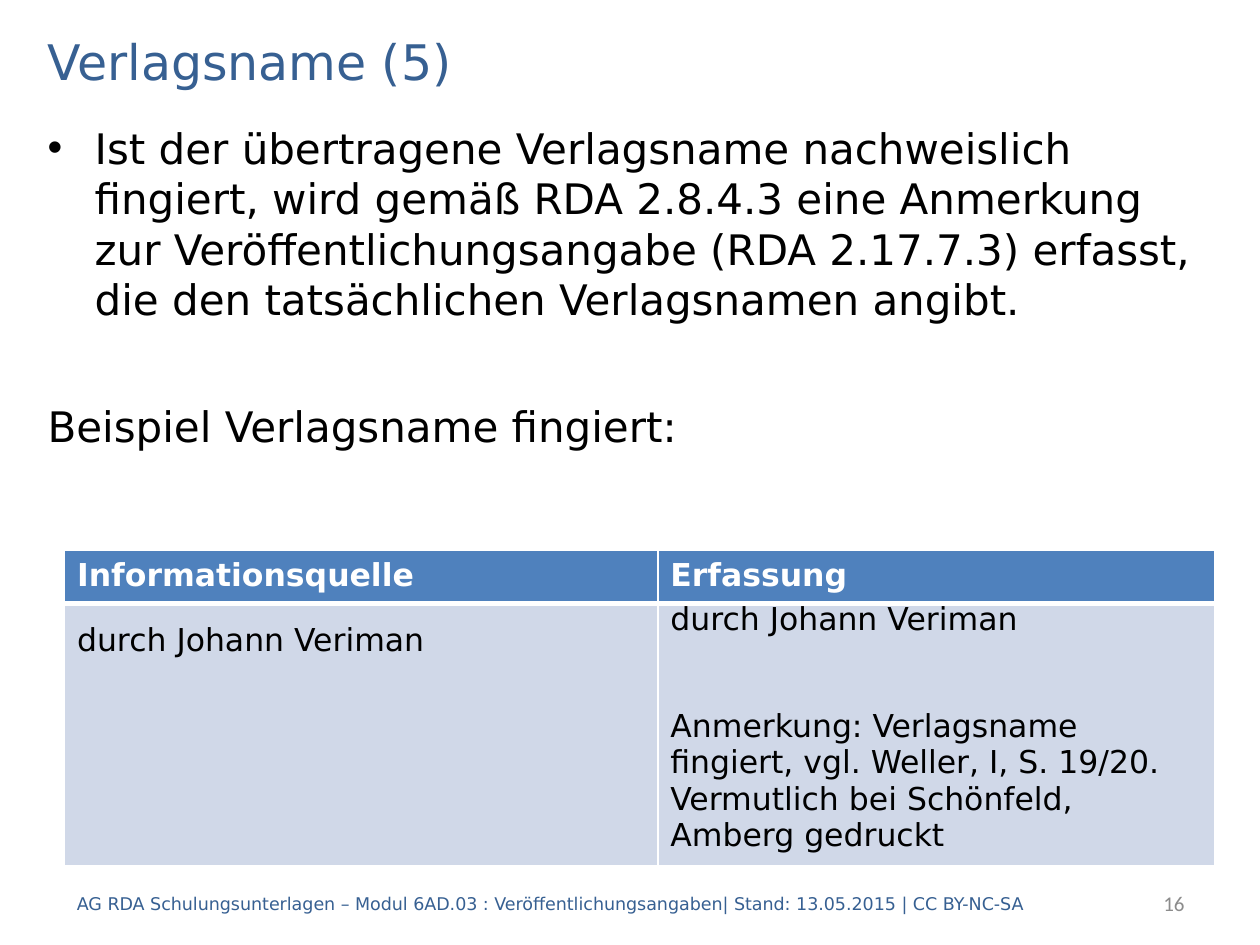
from lxml.etree import SubElement
from pptx import Presentation
from pptx.dml.color import RGBColor
from pptx.enum.text import MSO_ANCHOR, PP_ALIGN
from pptx.oxml.ns import qn
from pptx.util import Cm, Pt

BLUE, BLACK, WHITE, GREY = "376092", "000000", "FFFFFF", "8C8C8C"
HEADER_FILL, BODY_FILL = "4F81BD", "D0D8E8"


def colour(value):
    """Turn a hex string into a colour."""
    return RGBColor.from_string(value)


def apply_format(target, values):
    """Set each attribute named in a dict of format values."""
    for name, value in values.items():
        setattr(target, name, value)


class SlideBuilder:
    """Hold the style and the current slide and add elements to it."""

    font = "DejaVu Sans"

    def __init__(self, deck):
        """Start a page on the blank layout."""
        self.page = deck.slides.add_slide(deck.slide_layouts[6])

    def add_span(self, para, text, size, ink, layout=None, **font):
        """Fill a paragraph with one formatted span."""
        span = para.add_run()
        span.text = text
        apply_format(span.font, {"name": self.font, "size": Pt(size), **font})
        span.font.color.rgb = colour(ink)
        apply_format(para, layout or {})

    def text(self, place, text, size, ink, anchor=MSO_ANCHOR.MIDDLE, layout=None, **font):
        """Add a wrapped text box and return its frame."""
        box = self.page.shapes.add_textbox(*map(Cm, place))
        frame = box.text_frame
        apply_format(frame, {"word_wrap": True, "vertical_anchor": anchor})
        self.add_span(frame.paragraphs[0], text, size, ink, layout, **font)
        return frame

    def bullet(self, para, indent):
        """Give a paragraph a hanging bullet."""
        properties = para._p.get_or_add_pPr()
        properties.set("marL", str(Cm(indent)))
        properties.set("indent", str(-Cm(indent)))
        SubElement(properties, qn("a:buFont"), typeface="Arial")
        SubElement(properties, qn("a:buChar"), char="•")

    def borders(self, cell, **widths):
        """Draw white cell borders, one point wide unless given."""
        properties = cell._tc.get_or_add_tcPr()
        for side in "LRTB":
            width = Pt(widths.get(side, 1))
            line = SubElement(properties, qn(f"a:ln{side}"), w=str(width))
            fill = SubElement(line, qn("a:solidFill"))
            SubElement(fill, qn("a:srgbClr"), val=WHITE)

    def table(self, place, widths, heights):
        """Add an empty table of given column widths and row heights."""
        grid = self.page.shapes.add_table(
            len(heights), len(widths), *map(Cm, place), Cm(sum(widths)), Cm(sum(heights))
        ).table
        for column, width in zip(grid.columns, widths):
            column.width = Cm(width)
        for row, height in zip(grid.rows, heights):
            row.height = Cm(height)
        return grid

    def cell(self, cell, fill, ink, entries, bold=False, **widths):
        """Fill a cell with paragraphs given as text and layout pairs."""
        self.borders(cell, **widths)
        cell.fill.solid()
        cell.fill.fore_color.rgb = colour(fill)
        frame = cell.text_frame
        for number, (text, layout) in enumerate(entries):
            para = frame.add_paragraph() if number else frame.paragraphs[0]
            self.add_span(para, text, 18, ink, layout, bold=bold)


def main():
    """Build the slide and save it."""
    deck = Presentation()
    apply_format(deck, {"slide_width": Cm(25.4), "slide_height": Cm(19.05)})
    slide = SlideBuilder(deck)

    slide.text((0.71, 0.51, 24, 1.42), "Verlagsname (5)", 28, BLUE)
    body = slide.text(
        (0.71, 2.34, 24, 15.19),
        "Ist der übertragene Verlagsname nachweislich fingiert, wird gemäß RDA 2.8.4.3 "
        "eine Anmerkung zur Veröffentlichungsangabe (RDA 2.17.7.3) erfasst, "
        "die den tatsächlichen Verlagsnamen angibt.",
        24, BLACK, MSO_ANCHOR.TOP,
    )
    slide.bullet(body.paragraphs[0], 0.95)
    slide.add_span(body.add_paragraph(), "Beispiel Verlagsname fingiert:", 24, BLACK,
                   {"space_before": Pt(44)})

    grid = slide.table((1.3, 11.1), (11.96, 11.23), (1.07, 5.18))
    for column, heading in enumerate(("Informationsquelle", "Erfassung")):
        slide.cell(grid.cell(0, column), HEADER_FILL, WHITE, [(heading, {})], True, B=3)

    publisher = "durch Johann Veriman"
    note = ("Anmerkung: Verlagsname fingiert, vgl. Weller, I, S. 19/20. "
            "Vermutlich bei Schönfeld, Amberg gedruckt")
    source, record = grid.cell(1, 0), grid.cell(1, 1)
    slide.cell(source, BODY_FILL, BLACK, [(publisher, {"line_spacing": 1.02})], T=3)
    source.margin_top = Cm(0.36)
    slide.cell(record, BODY_FILL, BLACK, [
        (publisher, {"line_spacing": Pt(16), "space_after": Pt(6)}),
        (note, {"space_before": Pt(34)}),
    ], T=3)

    slide.text(
        (1.3, 17.7, 20.6, 1.02),
        "AG RDA Schulungsunterlagen – Modul 6AD.03 : Veröffentlichungsangaben"
        "| Stand: 13.05.2015 | CC BY-NC-SA",
        10, BLUE,
    )
    slide.text((22.91, 17.7, 1.22, 1.02), "16", 12, GREY,
               layout={"alignment": PP_ALIGN.RIGHT}, name="Calibri")
    deck.save("out.pptx")


if __name__ == "__main__":
    main()
